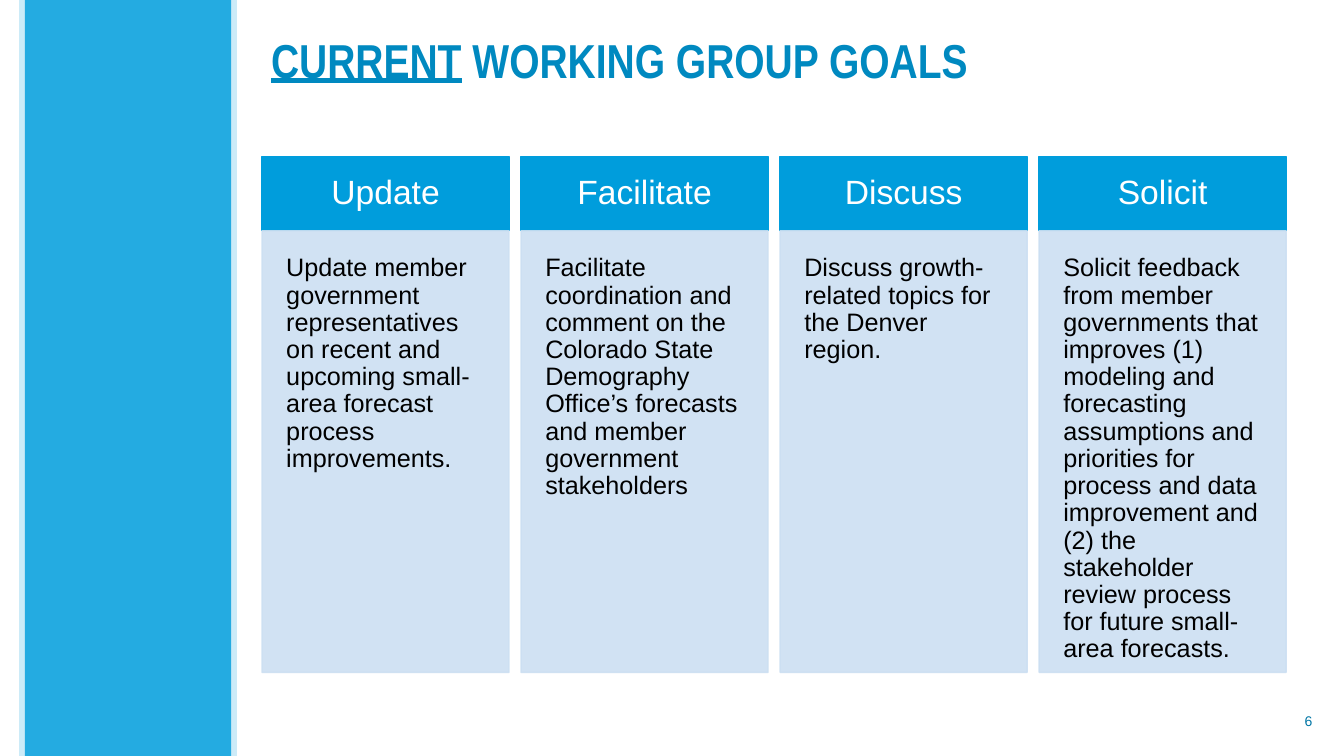
from dataclasses import dataclass

from lxml import etree
from pptx import Presentation
from pptx.dml.color import RGBColor
from pptx.enum import shapes, text
from pptx.oxml.ns import qn
from pptx.util import Pt


@dataclass(frozen=True)
class Theme:
    blue: str = "009DDC"
    title_blue: str = "0089C0"
    number_blue: str = "0076A5"
    pale: str = "CCDFF2"
    white: str = "FFFFFF"
    black: str = "000000"
    font: str = "Arial"
    title_font: str = "Arial Narrow"
    title_size: float = 34
    head_size: float = 24
    body_size: float = 18
    number_size: float = 10


THEME = Theme()

GOALS = [
    ("Update", "Update member government representatives on recent and upcoming "
               "small-area forecast process improvements."),
    ("Facilitate", "Facilitate coordination and comment on the Colorado State "
                   "Demography Office’s forecasts and member government stakeholders"),
    ("Discuss", "Discuss growth-related topics for the Denver region."),
    ("Solicit", "Solicit feedback from member governments that improves (1) modeling "
                "and forecasting assumptions and priorities for process and data "
                "improvement and (2) the stakeholder review process for future "
                "small-area forecasts."),
]


def paint(fmt, color, alpha=100):
    """Apply a solid colour, with opacity in percent, to a fill."""
    fmt.solid()
    fmt.fore_color.rgb = RGBColor.from_string(color)
    if alpha < 100:
        clr = fmt._xPr.find(qn("a:solidFill"))[0]
        etree.SubElement(clr, qn("a:alpha"), val=str(alpha * 1000))


def add_rect(s, box, color, alpha=100, outlined=False):
    sp = s.shapes.add_shape(shapes.MSO_SHAPE.RECTANGLE, *map(Pt, box))
    sp.shadow.inherit = False
    paint(sp.fill, color, alpha)
    if outlined:
        sp.line.width = Pt(1)
        paint(sp.line.fill, color, alpha)
    else:
        sp.line.fill.background()
    return sp


def set_text(sp, runs, *, size, color, font=THEME.font, bold=False, align="LEFT",
             anchor="MIDDLE", inset=None, spacing=None):
    """Write (words, underlined) runs as the one paragraph of a shape."""
    tf = sp.text_frame
    tf.word_wrap = True
    tf.auto_size = text.MSO_AUTO_SIZE.NONE
    tf.vertical_anchor = text.MSO_ANCHOR[anchor]
    if inset is not None:
        tf.margin_left = tf.margin_right = Pt(inset)
        tf.margin_top = tf.margin_bottom = Pt(inset)
    p = tf.paragraphs[0]
    p.alignment = text.PP_ALIGN[align]
    if spacing:
        p.line_spacing = spacing
    for words, underlined in runs:
        r = p.add_run()
        r.text = words
        r.font.name, r.font.size = font, Pt(size)
        r.font.bold, r.font.underline = bold, underlined
        r.font.color.rgb = RGBColor.from_string(color)


def add_sidebar(s, box, rim=4):
    """Solid band inside a paler, slightly wider one."""
    x, y, w, h = box
    add_rect(s, box, THEME.blue, 20)
    add_rect(s, (x + rim, y, w - 2 * rim, h), THEME.blue, 82)


def add_title(s, box):
    sp = s.shapes.title
    sp.left, sp.top, sp.width, sp.height = map(Pt, box)
    set_text(sp, [("CURRENT", True), (" WORKING GROUP GOALS", False)],
             size=THEME.title_size, color=THEME.title_blue,
             font=THEME.title_font, bold=True, spacing=0.9)


def add_goal(s, box, head, body, head_h=53.3):
    """One column: heading bar above a pale panel."""
    x, y, w, h = box
    bar = add_rect(s, (x, y, w, head_h), THEME.blue, outlined=True)
    set_text(bar, [(head, False)], size=THEME.head_size, color=THEME.white,
             align="CENTER", inset=13.5, spacing=0.9)
    panel = add_rect(s, (x, y + head_h, w, h - head_h), THEME.pale, 90, outlined=True)
    set_text(panel, [(body, False)], size=THEME.body_size, color=THEME.black,
             anchor="TOP", inset=17.3, spacing=0.9)


def add_goals(s, box, gap=8.6):
    x, y, w, h = box
    col_w = (w - gap * (len(GOALS) - 1)) / len(GOALS)
    for i, (head, body) in enumerate(GOALS):
        add_goal(s, (x + i * (col_w + gap), y, col_w, h), head, body)


def add_number(s, box, number):
    sp = s.shapes.add_textbox(*map(Pt, box))
    set_text(sp, [(number, False)], size=THEME.number_size,
             color=THEME.number_blue, align="RIGHT")


def build_goals_slide(prs):
    s = prs.slides.add_slide(prs.slide_layouts[5])
    # Left band
    add_sidebar(s, (13.7, 0, 155.5, 540))
    # Heading
    add_title(s, (186.5, 5.8, 766.8, 77.8))
    # Four goals
    add_goals(s, (187.2, 111.6, 731.5, 368.7))
    # Page number
    add_number(s, (728.6, 500.4, 216, 28.8), "6")


def main():
    prs = Presentation()
    prs.slide_width, prs.slide_height = Pt(960), Pt(540)
    build_goals_slide(prs)
    prs.save("out.pptx")


if __name__ == "__main__":
    main()
